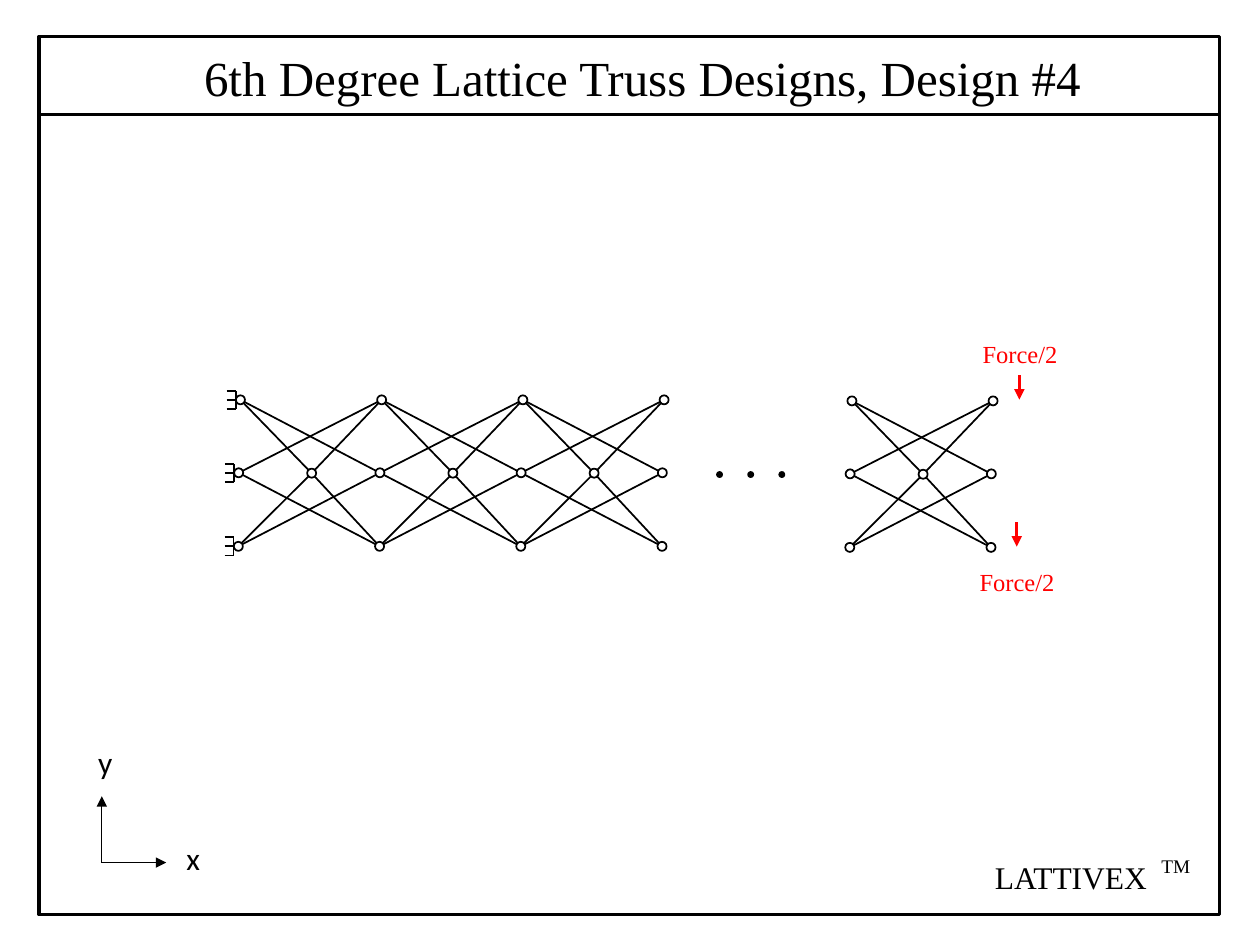
from dataclasses import dataclass

from lxml.etree import SubElement
from pptx import Presentation
from pptx.dml.color import RGBColor
from pptx.enum.shapes import MSO_CONNECTOR as Link, MSO_SHAPE as Shape
from pptx.enum.text import MSO_ANCHOR as Anchor, MSO_AUTO_SIZE as Fit, PP_ALIGN as Align
from pptx.oxml.ns import qn
from pptx.util import Pt


@dataclass(frozen=True)
class Theme:
    ink: RGBColor = RGBColor(0, 0, 0)
    paper: RGBColor = RGBColor(255, 255, 255)
    load: RGBColor = RGBColor(255, 0, 0)
    serif: str = "Times New Roman"
    sans: str = "Calibri"
    title_size: int = 28
    label_size: int = 18
    force_size: int = 14
    mark_size: int = 11
    heavy: float = 2
    medium: float = 1
    thin: float = 0.5


class Sketch:
    """Draws styled elements on one slide; lengths are in points."""

    def __init__(self, page, theme):
        self.page, self.theme = page, theme

    def set_text(self, box, words, size, font, color):
        frame = box.text_frame
        frame.text = words
        frame.vertical_anchor = Anchor.TOP
        para = frame.paragraphs[0]
        para.alignment = Align.LEFT
        para.font.size, para.font.name = Pt(size), font
        para.font.color.rgb = color

    def title(self, words, left, top, width, height):
        box = self.page.shapes.title
        box.left, box.top, box.width, box.height = map(Pt, (left, top, width, height))
        self.set_text(box, words, self.theme.title_size, self.theme.serif, self.theme.ink)
        box.text_frame.auto_size = Fit.NONE

    def label(self, words, left, top, width, height, size, font, color=None):
        box = self.page.shapes.add_textbox(*map(Pt, (left, top, width, height)))
        self.set_text(box, words, size, font, color or self.theme.ink)
        box.text_frame.word_wrap = True

    def line(self, start, end, weight=None, color=None, arrow=False):
        link = self.page.shapes.add_connector(Link.STRAIGHT, *map(Pt, (*start, *end)))
        link.line.width = Pt(weight or self.theme.medium)
        link.line.color.rgb = color or self.theme.ink
        properties = link.element.spPr
        if arrow:
            SubElement(properties.find(qn("a:ln")), qn("a:tailEnd"), type="triangle")
        SubElement(properties, qn("a:effectLst"))

    def shape(self, kind, left, top, width, height, fill=None, weight=None):
        item = self.page.shapes.add_shape(kind, *map(Pt, (left, top, width, height)))
        item.shadow.inherit = False
        if fill is None:
            item.fill.background()
        else:
            item.fill.solid()
            item.fill.fore_color.rgb = fill
        item.line.color.rgb = self.theme.ink
        item.line.width = Pt(weight or self.theme.medium)

    def dot(self, center, diameter, fill):
        x, y = center
        self.shape(Shape.OVAL, x - diameter / 2, y - diameter / 2, diameter, diameter, fill)

    def support(self, joint):
        """A wall bracket to the left of a fixed joint."""
        x, y = joint[0] - 2.7, joint[1]
        self.line((x, y + 5.2), (x, y - 5.2))
        for step in (-5.2, 0, 5.2):
            self.line((x - 5.2, y + step), (x, y + step))


# Lattice geometry: three rows of joints, repeated by panel
PITCH = 80.7
JOINT = 5.2
ROWS = {"top": (137.4, 228.5), "middle": (136.4, 270.2), "bottom": (136.2, 312.2)}
CENTER = (178.1, 270.4)
FAR_PANEL = (349.4, 0.6)
DIAGONALS = [("top", "middle"), ("middle", "top"), ("middle", "bottom"), ("bottom", "middle")]


def shifted(point, offset):
    return point[0] + offset[0], point[1] + offset[1]


def draw_lattice(sketch, offsets):
    joints = set()
    for offset in offsets:
        left = {row: shifted(point, offset) for row, point in ROWS.items()}
        right = {row: shifted(point, (PITCH, 0)) for row, point in left.items()}
        center = shifted(CENTER, offset)
        for near, far in DIAGONALS:
            sketch.line(left[near], right[far])
        for corner in (left["top"], left["bottom"], right["top"], right["bottom"]):
            sketch.line(corner, center)
        for joint in (*left.values(), *right.values(), center):
            joints.add((round(joint[0], 2), round(joint[1], 2)))
    for joint in sorted(joints):
        sketch.dot(joint, JOINT, sketch.theme.paper)


def main():
    theme = Theme()
    deck = Presentation()
    deck.slide_width, deck.slide_height = Pt(720), Pt(540)
    sketch = Sketch(deck.slides.add_slide(deck.slide_layouts[5]), theme)

    # Frame and title
    sketch.shape(Shape.RECTANGLE, 22.3, 20.9, 674.6, 501.8, weight=theme.heavy)
    sketch.line((22.3, 65.5), (696.9, 65.5), theme.heavy)
    sketch.title("6th Degree Lattice Truss Designs, Design #4", 109.4, 23.8, 530, 41)

    # Coordinate axes
    origin = (58.2, 492.9)
    for name, tip, left, top in (("x", (95, 492.9), 99.4, 475.9), ("y", (58.2, 455), 49, 421.2)):
        sketch.line(origin, tip, theme.thin, arrow=True)
        sketch.label(name, left, top, 22.3, 29, theme.label_size, theme.sans)

    # Truss panels, with dots for those left out
    draw_lattice(sketch, [(PITCH * panel, 0) for panel in range(3)] + [FAR_PANEL])
    for step in range(3):
        sketch.dot((411.2 + 17.8 * step, 271.2), 2.9, theme.ink)

    # Fixed supports
    for joint in ROWS.values():
        sketch.support(joint)

    # Loads at the free end
    for x, y, left, top in ((582.5, 214.4, 554.4, 190), (581, 298.4, 552.7, 320.3)):
        sketch.line((x, y), (x, y + 14), theme.heavy, theme.load, arrow=True)
        sketch.label("Force/2", left, top, 66, 24.5, theme.force_size, theme.serif, theme.load)

    # Trade name
    sketch.label("LATTIVEX", 561.4, 486.7, 110, 29, theme.label_size, theme.serif)
    sketch.label("TM", 656.5, 484.5, 36.7, 29, theme.mark_size, theme.serif)

    deck.save("out.pptx")


if __name__ == "__main__":
    main()
